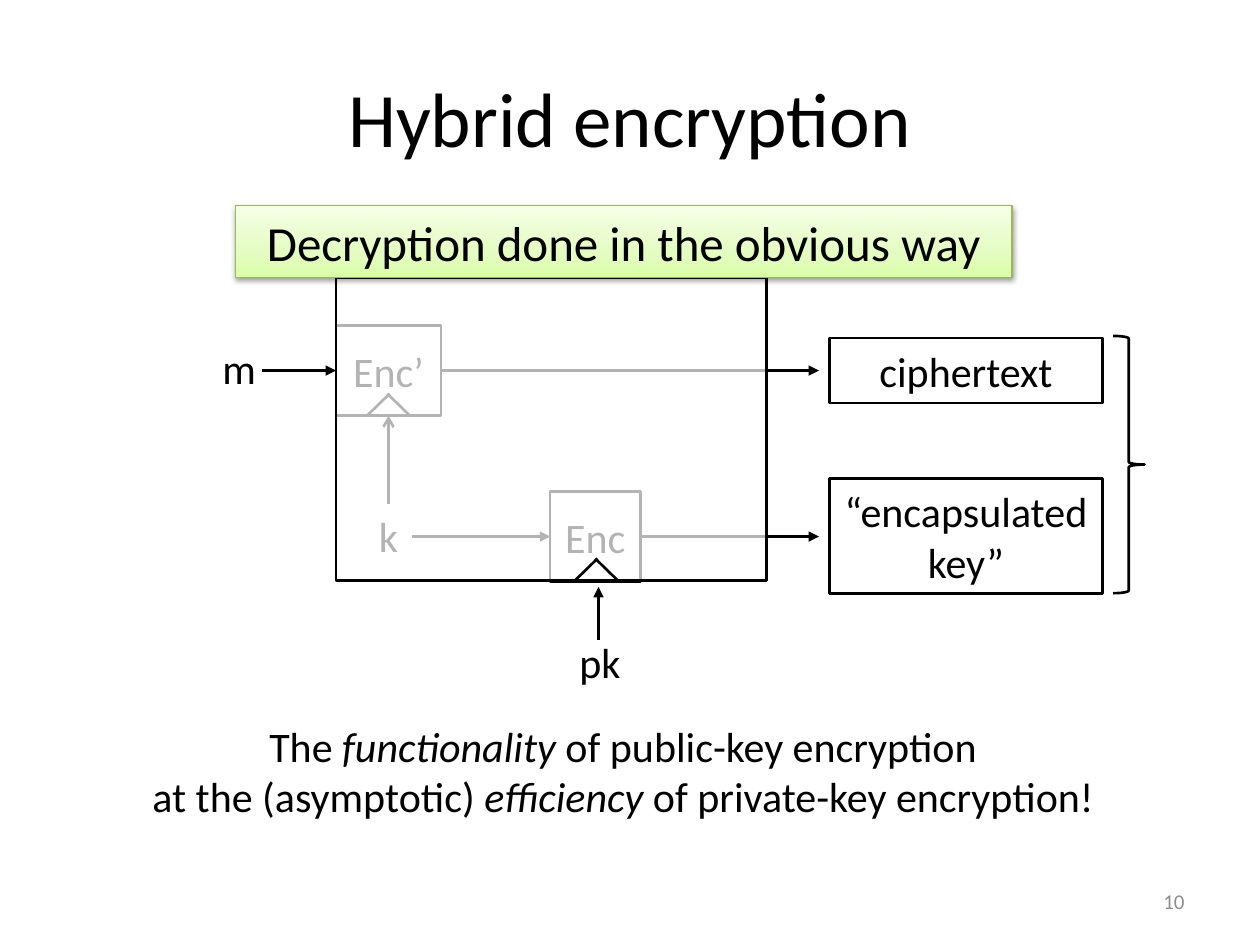
from dataclasses import dataclass

from lxml import etree
from pptx import Presentation, util as u
from pptx.dml.color import RGBColor
from pptx.enum import shapes, text
from pptx.oxml import parse_xml
from pptx.oxml.ns import nsdecls, qn

COLUMNS, ROWS = 120, 90
LEFT, CENTER, RIGHT = text.PP_ALIGN.LEFT, text.PP_ALIGN.CENTER, text.PP_ALIGN.RIGHT
TOP, MIDDLE = text.MSO_ANCHOR.TOP, text.MSO_ANCHOR.MIDDLE
SIDE_TOP, SIDE_LEFT, SIDE_BOTTOM, SIDE_RIGHT = range(4)


@dataclass(frozen=True)
class Theme:
    font: str = "Calibri"
    ink: str = "000000"
    paper: str = "FFFFFF"
    muted: str = "8C8C8C"
    banner_line: str = "98B955"
    banner_stops: tuple = ((0, "DAFDA7"), (35, "E4FCC2"), (100, "F5FFE7"))
    title: int = 44
    banner: int = 28
    body: int = 24
    small: int = 12
    stroke: float = 1.5
    hairline: float = 0.75


class Diagram:
    """Draws on one slide; every length is in grid columns and rows."""

    def __init__(self, presentation, theme):
        self.theme = theme
        self.column = presentation.slide_width / COLUMNS
        self.row = presentation.slide_height / ROWS
        self.slide = presentation.slides.add_slide(presentation.slide_layouts[6])

    def place(self, left, top, *more):
        return [round(value * unit) for value, unit in
                zip((left, top, *more), (self.column, self.row) * 2)]

    def set_text(self, shape, lines, size, align=CENTER, anchor=MIDDLE, color=None, wrap=True):
        """Fill a shape with lines; parts between asterisks become italic."""
        frame = shape.text_frame
        frame.word_wrap = wrap
        frame.vertical_anchor = anchor
        for index, line in enumerate(lines.split("\n")):
            paragraph = frame.add_paragraph() if index else frame.paragraphs[0]
            paragraph.alignment = align
            for part, words in enumerate(line.split("*")):
                run = paragraph.add_run()
                run.text = words
                run.font.name = self.theme.font
                run.font.size = u.Pt(size)
                run.font.italic = part % 2 == 1
                run.font.color.rgb = RGBColor.from_string(color or self.theme.ink)

    def label(self, box, lines, size=None, **style):
        shape = self.slide.shapes.add_textbox(*self.place(*box))
        self.set_text(shape, lines, size or self.theme.body, **style)

    def box(self, box, lines="", fill=None, kind=shapes.MSO_SHAPE.RECTANGLE):
        shape = self.slide.shapes.add_shape(kind, *self.place(*box))
        shape.shadow.inherit = False
        shape.line.color.rgb = RGBColor.from_string(self.theme.ink)
        shape.line.width = u.Pt(self.theme.stroke)
        if fill:
            shape.fill.solid()
            shape.fill.fore_color.rgb = RGBColor.from_string(fill)
        else:
            shape.fill.background()
        if lines:
            self.set_text(shape, lines, self.theme.body)
        return shape

    def veil(self, box, opacity):
        shape = self.box(box, fill=self.theme.paper)
        color = shape._element.spPr.find(qn("a:solidFill"))[0]
        etree.SubElement(color, qn("a:alpha"), val=str(opacity * 1000))

    def banner(self, box, words):
        shape = self.box(box)
        shape.line.color.rgb = RGBColor.from_string(self.theme.banner_line)
        shape.line.width = u.Pt(self.theme.hairline)
        stops = "".join(f'<a:gs pos="{position * 1000}"><a:srgbClr val="{color}"/></a:gs>'
                        for position, color in self.theme.banner_stops)
        properties = shape._element.spPr
        properties.replace(properties.find(qn("a:noFill")), parse_xml(
            f'<a:gradFill {nsdecls("a")} rotWithShape="1"><a:gsLst>{stops}</a:gsLst>'
            '<a:lin ang="16200000" scaled="0"/></a:gradFill>'))
        properties.find(qn("a:effectLst")).append(parse_xml(
            f'<a:outerShdw {nsdecls("a")} blurRad="{u.Pt(3.1)}" dist="{u.Pt(1.6)}" '
            f'dir="5400000" rotWithShape="0"><a:srgbClr val="{self.theme.ink}">'
            '<a:alpha val="38000"/></a:srgbClr></a:outerShdw>'))
        self.set_text(shape, words, self.theme.banner, anchor=TOP)

    def line(self, start, end, arrow=None, begin_at=None, end_at=None):
        """Draw a line; begin_at and end_at are (shape, side) pairs to join."""
        connector = self.slide.shapes.add_connector(
            shapes.MSO_CONNECTOR.STRAIGHT, *self.place(*start), *self.place(*end))
        connector.line.color.rgb = RGBColor.from_string(self.theme.ink)
        connector.line.width = u.Pt(self.theme.stroke)
        properties = connector._element.spPr
        if arrow:
            etree.SubElement(properties.find(qn("a:ln")), qn("a:tailEnd"), type=arrow)
        etree.SubElement(properties, qn("a:effectLst"))
        if begin_at:
            connector.begin_connect(*begin_at)
        if end_at:
            connector.end_connect(*end_at)

    def key_notch(self, center, base):
        """Draw the two strokes that mark a key input."""
        for side in (-1, 1):
            self.line((center + 2.05 * side, base), (center - 0.1 * side, base - 2.1))


def main():
    presentation = Presentation()
    presentation.slide_width, presentation.slide_height = u.Inches(10), u.Inches(7.5)
    theme = Theme()
    diagram = Diagram(presentation, theme)
    message_row, key_row = 35.3, 51.1
    output_column, key_column, public_column = 78, 37, 57
    side = 8.6
    base = key_row + side / 2 - 0.1

    diagram.label((6, 3.6, 108, 15), "Hybrid encryption", theme.title)
    diagram.label((86, 83.4, 28, 4.8), "10", theme.small, align=RIGHT, color=theme.muted)
    for box, words in (((20, 32, 5.6, 6), "m"), ((34.9, 48, 4.2, 6), "k"),
                       ((54, 60, 6.4, 6), "pk")):
        diagram.label(box, words, align=LEFT, anchor=TOP, wrap=False)
    diagram.label((12.8, 68, 93.1, 10.9),
                  "The *functionality* of public-key encryption\n"
                  "at the (asymptotic) *efficiency* of private-key encryption!",
                  anchor=TOP, wrap=False)

    private = diagram.box((32, message_row - side / 2, 10, side), "Enc’")
    public = diagram.box((52.4, key_row - side / 2, side, side), "Enc")
    diagram.box((79, 32.2, 26, 6.2), "ciphertext", theme.paper)
    diagram.box((79, 45.6, 26, 10.9), "“encapsulated key”", theme.paper)

    diagram.line((25, message_row), (32, message_row), "triangle",
                 end_at=(private, SIDE_LEFT))
    diagram.line((39.2, key_row), (52.4, key_row), "triangle", end_at=(public, SIDE_LEFT))
    diagram.line((key_column, 48), (key_column, 39.6), "arrow",
                 end_at=(private, SIDE_BOTTOM))
    diagram.line((public_column, 61), (public_column, 55.9), "triangle")
    for shape, row in ((private, message_row), (public, key_row)):
        diagram.line((42, row), (output_column, row), "triangle",
                     begin_at=(shape, SIDE_RIGHT))
    diagram.key_notch(key_column, 39.6)

    diagram.veil((32, 26.4, 41, base - 26.4), 70)
    diagram.key_notch(56.8, base)
    diagram.box((106, 32, 3, 24.5), kind=shapes.MSO_SHAPE.RIGHT_BRACE)
    diagram.banner((22.4, 19.6, 74, 6.8), "Decryption done in the obvious way")
    presentation.save("out.pptx")


if __name__ == "__main__":
    main()
